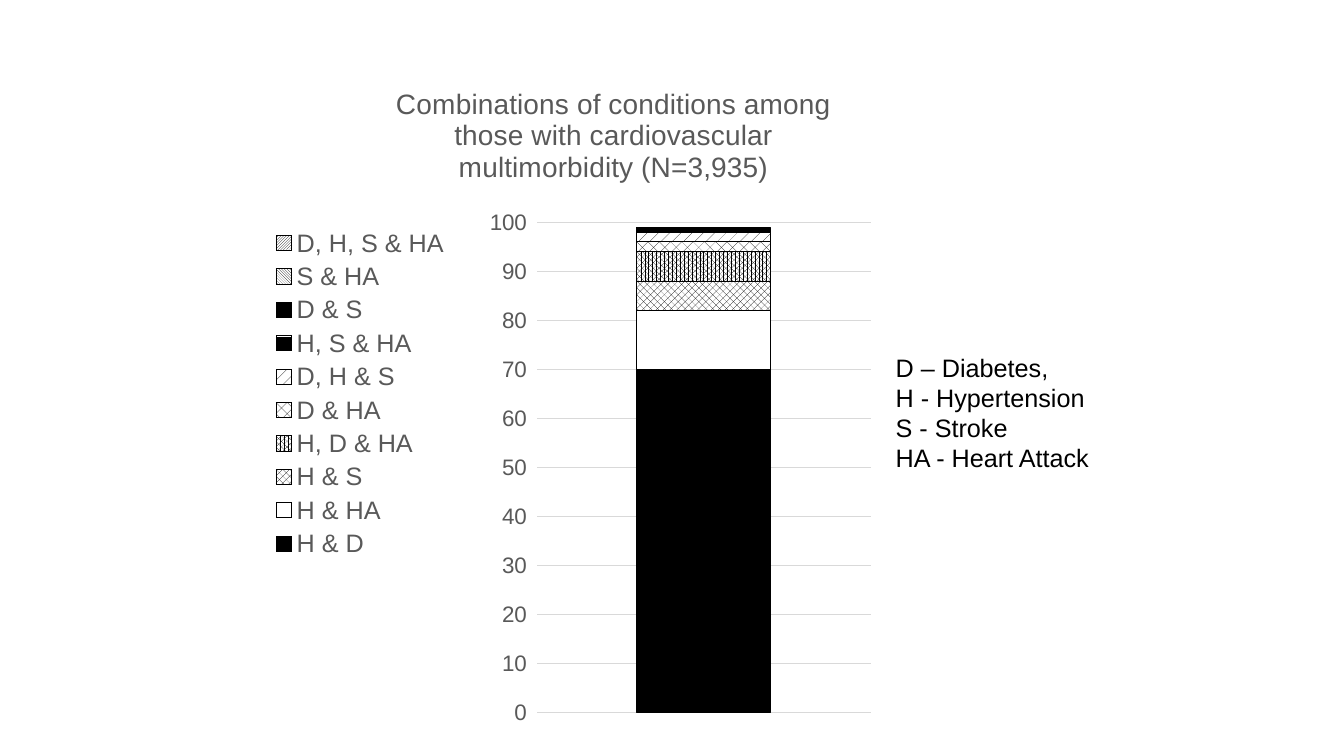
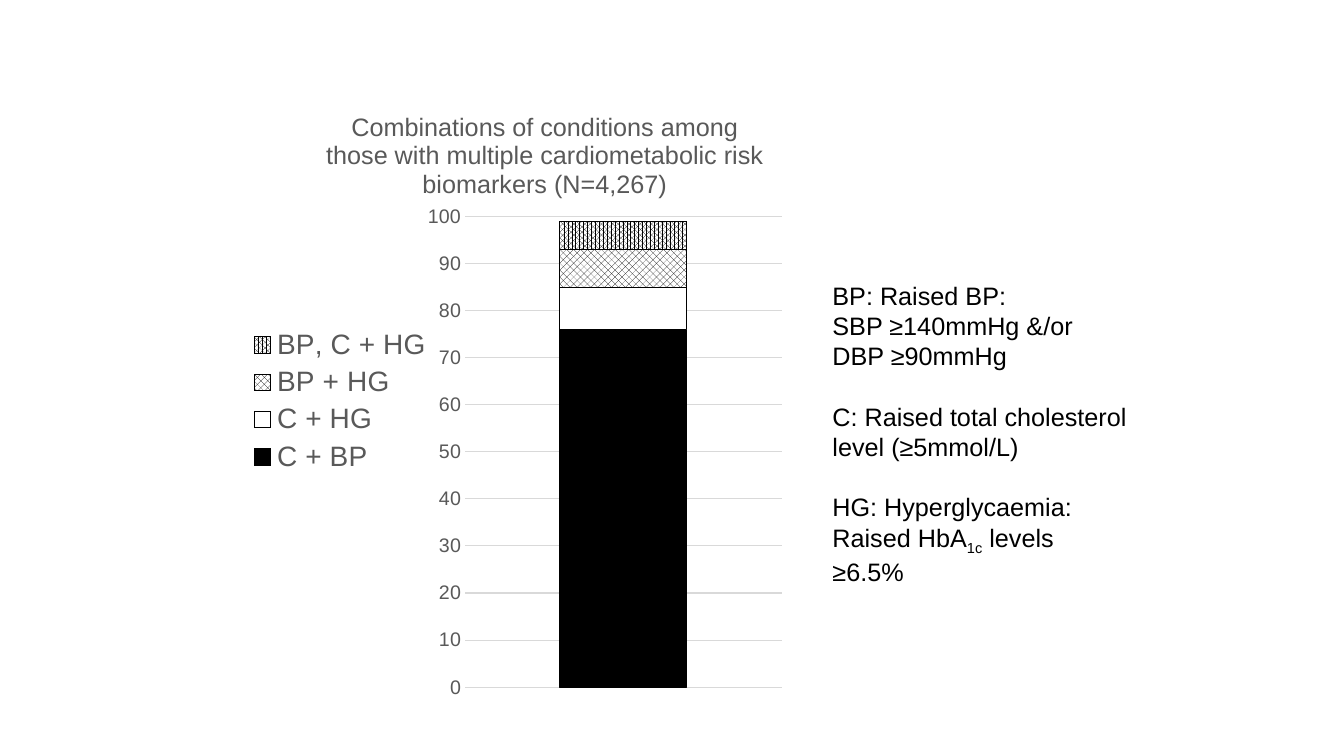
from lxml import etree
from pptx import Presentation
from pptx.chart.data import CategoryChartData
from pptx.dml.color import RGBColor
from pptx.enum.chart import XL_CHART_TYPE, XL_LEGEND_POSITION, XL_TICK_MARK
from pptx.enum.dml import MSO_PATTERN
from pptx.oxml.ns import qn
from pptx.util import Inches, Pt

STACKED = XL_CHART_TYPE.COLUMN_STACKED
LEGEND_LEFT = XL_LEGEND_POSITION.LEFT
NO_TICK = XL_TICK_MARK.NONE

BLACK = RGBColor(0x00, 0x00, 0x00)
WHITE = RGBColor(0xFF, 0xFF, 0xFF)
GREY = RGBColor(0x59, 0x59, 0x59)
GRID = RGBColor(0xD9, 0xD9, 0xD9)

FONT = "Arial"
SLIDE_W, SLIDE_H = Inches(13.33), Inches(7.5)
FILLS = [
    BLACK,
    WHITE,
    MSO_PATTERN.PERCENT_50,
    MSO_PATTERN.PERCENT_75,
    MSO_PATTERN.PERCENT_25,
    MSO_PATTERN.PERCENT_10,
    MSO_PATTERN.DARK_HORIZONTAL,
    MSO_PATTERN.DARK_VERTICAL,
    MSO_PATTERN.DARK_DOWNWARD_DIAGONAL,
    MSO_PATTERN.DARK_UPWARD_DIAGONAL,
]

CONDITIONS = {
    "box": (19.3, 8, 46.6, 88.1),
    "title": "Combinations of conditions among those with cardiovascular "
             "multimorbidity (N=3,935)",
    "title_at": (21, 3),
    "plot": (44.3, 24.3, 53.3, 73.6),
    "sizes": {"title": 20, "axis": 16, "legend": 18},
    "number_format": "0_ ;\\-0\\ ",
    "series": {
        "H & D": 70, "H & HA": 12, "H & S": 6, "H, D & HA": 6, "D & HA": 2,
        "D, H & S": 2, "H, S & HA": 1, "D & S": 0, "S & HA": 0,
        "D, H, S & HA": 0,
    },
}
CONDITIONS_KEY = [
    (0, ["D – Diabetes,"]),
    (0, ["H - Hypertension"]),
    (0, ["S - Stroke"]),
    (0, ["HA - Heart Attack"]),
]

BIOMARKERS = {
    "box": (17.6, 13.2, 42.2, 79.7),
    "title": "Combinations of conditions among those with multiple "
             "cardiometabolic risk biomarkers (N=4,267)",
    "title_at": (15, 1),
    "plot": (40.3, 19.4, 55.8, 78.1),
    "sizes": {"title": 18, "axis": 14, "legend": 20},
    "number_format": "General",
    "series": {"C + BP": 76, "C + HG": 9, "BP + HG": 8, "BP, C + HG": 6},
}
BIOMARKERS_KEY = [
    (0, ["BP: Raised BP:"]),
    (0, ["SBP ≥140mmHg &/or DBP ≥90mmHg"]),
    (21.6, ["C: Raised total cholesterol level (≥5mmol/L)"]),
    (21.6, ["HG: Hyperglycaemia: Raised HbA", "1c", " levels ≥6.5%"]),
]
SUBSCRIPTS = {"1c"}


def place(box):
    """Turn percentages of the slide into left, top, width and height."""
    return [int(side * share / 100)
            for side, share in zip((SLIDE_W, SLIDE_H) * 2, box)]


def style_font(font, size, color):
    """Apply the shared typeface with a size and colour."""
    font.name, font.size, font.bold = FONT, Pt(size), False
    font.color.rgb = color


def set_layout(parent, index, shares, inner=False):
    """Fix a chart part at percentages of the chart's box."""
    for old in parent.findall(qn("c:layout")):
        parent.remove(old)
    layout = etree.Element(qn("c:layout"))
    manual = etree.SubElement(layout, qn("c:manualLayout"))
    if inner:
        etree.SubElement(manual, qn("c:layoutTarget")).set("val", "inner")
    for mode in ("xMode", "yMode"):
        etree.SubElement(manual, qn(f"c:{mode}")).set("val", "edge")
    for name, share in zip("xywh", shares):
        etree.SubElement(manual, qn(f"c:{name}")).set("val", f"{share / 100:.3f}")
    parent.insert(index, layout)


def fill_series(series, style):
    """Fill a series with a colour or a black on white pattern."""
    fill = series.format.fill
    if isinstance(style, RGBColor):
        fill.solid()
        fill.fore_color.rgb = style
    else:
        fill.patterned()
        fill.pattern = style
        fill.fore_color.rgb, fill.back_color.rgb = BLACK, WHITE
    series.format.line.color.rgb = BLACK
    series.format.line.width = Pt(0.75)


def style_axes(chart, size, number_format):
    """Hide the category axis and draw the 0 to 100 value axis."""
    chart.category_axis.visible = False
    axis = chart.value_axis
    axis.minimum_scale, axis.maximum_scale, axis.major_unit = 0, 100, 10
    axis.major_tick_mark = axis.minor_tick_mark = NO_TICK
    axis.format.line.fill.background()
    grid = axis.major_gridlines.format.line
    grid.color.rgb, grid.width = GRID, Pt(0.75)
    labels = axis.tick_labels
    labels.number_format, labels.number_format_is_linked = number_format, False
    style_font(labels.font, size, GREY)


def add_stack(slide, spec_):
    """Add a single stacked column with its title and left legend."""
    data = CategoryChartData()
    data.categories = ["1"]
    for name, value in spec_["series"].items():
        data.add_series(name, [value])
    chart = slide.shapes.add_chart(STACKED, *place(spec_["box"]), data).chart
    sizes = spec_["sizes"]
    style_font(chart.font, 10, BLACK)

    chart.has_title = True
    title = chart.chart_title
    p = title.text_frame.paragraphs[0]
    p.text = spec_["title"]
    style_font(p.font, sizes["title"], GREY)
    title.include_in_layout = False
    set_layout(title._element, 1, spec_["title_at"])

    chart.has_legend = True
    chart.legend.position = LEGEND_LEFT
    chart.legend.include_in_layout = False
    style_font(chart.legend.font, sizes["legend"], GREY)

    plot = chart.plots[0]
    plot.gap_width, plot.overlap, plot.vary_by_categories = 150, 100, False
    for series, style in zip(plot.series, FILLS):
        fill_series(series, style)
    style_axes(chart, sizes["axis"], spec_["number_format"])
    set_layout(chart._chartSpace.chart.plotArea, 0, spec_["plot"], inner=True)


def add_key(slide, box, lines):
    """Add the list that explains the abbreviations."""
    tf = slide.shapes.add_textbox(*place(box)).text_frame
    tf.word_wrap = True
    for i, (gap, runs) in enumerate(lines):
        p = tf.add_paragraph() if i else tf.paragraphs[0]
        p.space_before = Pt(gap)
        style_font(p.font, 18, BLACK)
        for text in runs:
            r = p.add_run()
            r.text = text
            style_font(r.font, 18, BLACK)
            if text in SUBSCRIPTS:
                r.font._element.set("baseline", "-25000")


def add_chart_slide(prs, chart_spec, key_box, key):
    """Add a slide with a stacked column and its key."""
    slide = prs.slides.add_slide(prs.slide_layouts[6])
    add_stack(slide, chart_spec)
    add_key(slide, key_box, key)


def main():
    """Build and save the presentation."""
    prs = Presentation()
    prs.slide_width, prs.slide_height = SLIDE_W, SLIDE_H
    add_chart_slide(prs, CONDITIONS, (65.9, 45.9, 16.5, 17.5), CONDITIONS_KEY)
    add_chart_slide(prs, BIOMARKERS, (61.2, 36.4, 23.6, 41.7), BIOMARKERS_KEY)
    prs.save("out.pptx")


if __name__ == "__main__":
    main()
